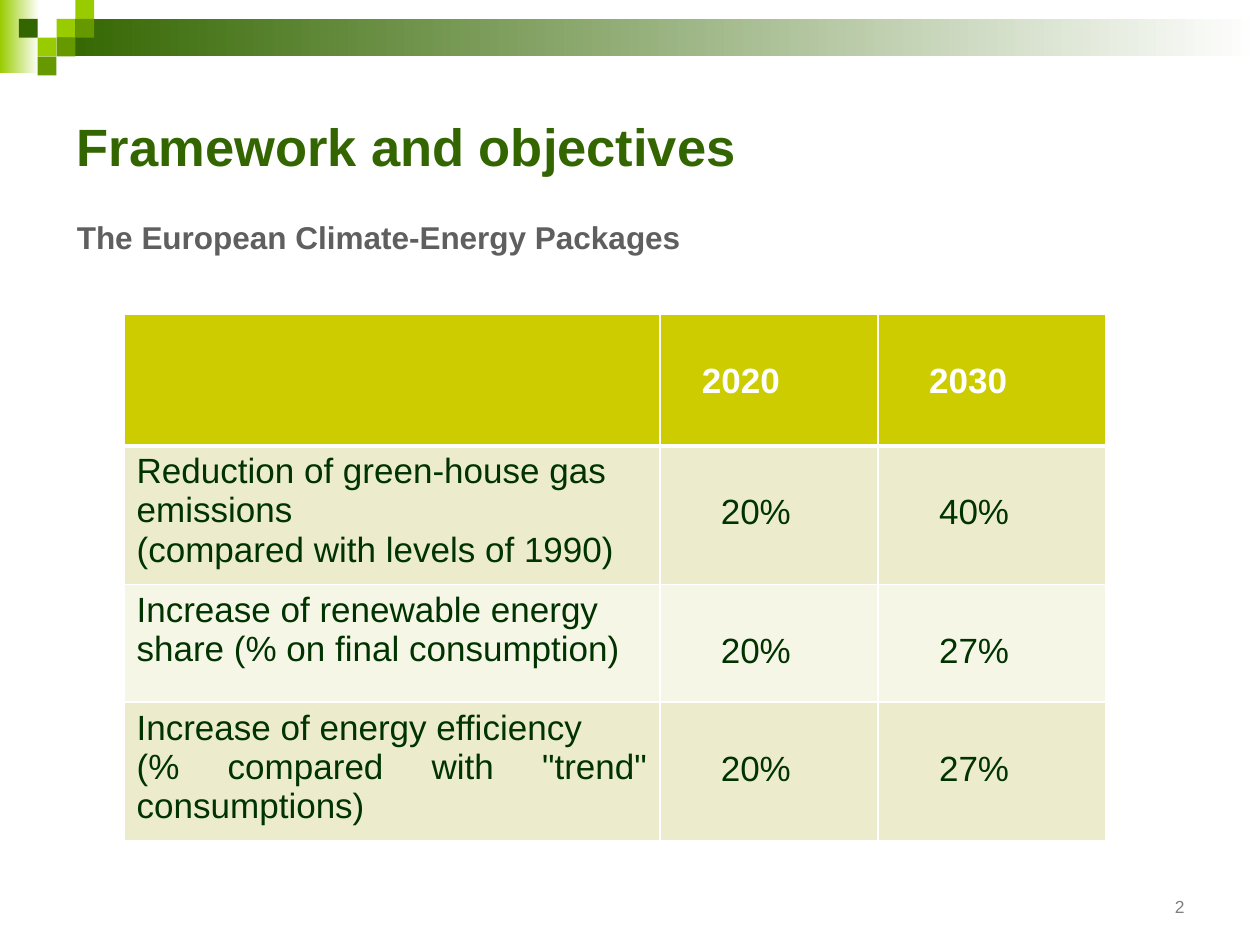
from lxml import etree
from pptx import Presentation
from pptx.dml.color import RGBColor
from pptx.enum import shapes, text
from pptx.oxml import ns
from pptx.util import Cm, Pt

WHITE = RGBColor(0xFF, 0xFF, 0xFF)
LIME = RGBColor(0x99, 0xCC, 0x00)
LEAF = RGBColor(0x66, 0x99, 0x00)
FOREST = RGBColor(0x33, 0x66, 0x00)
DARK_GREEN = RGBColor(0x00, 0x33, 0x00)
SUBTITLE_GREY = RGBColor(0x5F, 0x5F, 0x5F)
NUMBER_GREY = RGBColor(0x80, 0x80, 0x80)
HEADER_FILL = RGBColor(0xCC, 0xCC, 0x00)
BAND_FILLS = (RGBColor(0xEC, 0xEC, 0xCC), RGBColor(0xF6, 0xF6, 0xE7))

LEFT, JUSTIFY, RIGHT = (
    text.PP_ALIGN.LEFT, text.PP_ALIGN.JUSTIFY, text.PP_ALIGN.RIGHT)
TILE = 0.38
# Column, row and colour of each tile, counted from the top left corner.
TILES = [(3, 1, LIME), (4, 0, LIME), (4, 1, LEAF), (2, 2, LIME),
         (1, 1, FOREST), (3, 2, LEAF), (2, 3, LEAF)]

COLUMN_WIDTHS = (10.8, 4.4, 4.6)
ROW_HEIGHTS = (2.65, 2.6, 2.37, 2.6)
YEARS = ("2020", "2030")
YEAR_MARGINS = (0.85, 1.03)
VALUE_MARGIN = 1.23
TARGETS = [
    ([("Reduction of green-house gas emissions", LEFT),
      ("(compared with levels of 1990)", LEFT)], ("20%", "40%")),
    ([("Increase of renewable energy share (% on final consumption)", LEFT)],
     ("20%", "27%")),
    ([("Increase of energy efficiency", LEFT),
      ('(% compared with "trend" consumptions)', JUSTIFY)], ("20%", "27%")),
]


def add_block(slide, left, top, width, height):
    block = slide.shapes.add_shape(
        shapes.MSO_SHAPE.RECTANGLE, Cm(left), Cm(top), Cm(width), Cm(height))
    block.shadow.inherit = False
    block.line.fill.background()
    return block


def add_fading_bar(slide, left, top, width, height, color):
    """Add a bar that fades to white on its right."""
    fill = add_block(slide, left, top, width, height).fill
    fill.gradient()
    fill.gradient_angle = 0
    for stop, shade, position in zip(fill.gradient_stops, (color, WHITE), (0, 1)):
        stop.color.rgb = shade
        stop.position = position


def add_banner(slide):
    add_fading_bar(slide, 0, 0, 0.79, 1.47, LIME)
    add_fading_bar(slide, 3 * TILE, TILE, 25.4 - 3 * TILE, 2 * TILE, FOREST)
    for column, row, color in TILES:
        tile = add_block(slide, column * TILE, row * TILE, TILE, TILE)
        tile.fill.solid()
        tile.fill.fore_color.rgb = color


def write(paragraph, words, size, color, bold=False, align=LEFT):
    paragraph.alignment = align
    run = paragraph.add_run()
    run.text = words
    run.font.name = "Arial"
    run.font.size = Pt(size)
    run.font.bold = bold
    run.font.color.rgb = color


def add_text(slide, left, top, width, height, anchor, *style, **options):
    frame = slide.shapes.add_textbox(
        Cm(left), Cm(top), Cm(width), Cm(height)).text_frame
    frame.word_wrap = True
    frame.vertical_anchor = anchor
    write(frame.paragraphs[0], *style, **options)
    return frame.paragraphs[0]


def style_cell(cell, fill, bottom_width=1):
    """Fill the cell and give it white borders."""
    properties = cell._tc.get_or_add_tcPr()
    for side, width in (("L", 1), ("R", 1), ("T", 1), ("B", bottom_width)):
        line = etree.SubElement(
            properties, ns.qn(f"a:ln{side}"), w=str(Pt(width)))
        paint = etree.SubElement(line, ns.qn("a:solidFill"))
        etree.SubElement(paint, ns.qn("a:srgbClr"), val=str(WHITE))
    cell.fill.solid()
    cell.fill.fore_color.rgb = fill


def write_figure(cell, words, margin, color, bold=False):
    cell.margin_left = Cm(margin)
    cell.margin_top = Cm(0.95)
    write(cell.text_frame.paragraphs[0], words, 20, color, bold)


def add_targets_table(slide):
    table = slide.shapes.add_table(
        len(ROW_HEIGHTS), len(COLUMN_WIDTHS), Cm(2.5), Cm(6.34),
        Cm(sum(COLUMN_WIDTHS)), Cm(sum(ROW_HEIGHTS))).table
    for column, width in zip(table.columns, COLUMN_WIDTHS):
        column.width = Cm(width)
    for row, height in zip(table.rows, ROW_HEIGHTS):
        row.height = Cm(height)

    for cell in table.rows[0].cells:
        style_cell(cell, HEADER_FILL, bottom_width=3)
    for column, (year, margin) in enumerate(zip(YEARS, YEAR_MARGINS), 1):
        write_figure(table.cell(0, column), year, margin, WHITE, bold=True)

    for row, (objective, values) in enumerate(TARGETS, 1):
        for cell in table.rows[row].cells:
            style_cell(cell, BAND_FILLS[(row - 1) % 2],
                       bottom_width=1)
        frame = table.cell(row, 0).text_frame
        for index, (words, align) in enumerate(objective):
            paragraph = frame.add_paragraph() if index else frame.paragraphs[0]
            write(paragraph, words, 20, DARK_GREEN, align=align)
        for column, value in enumerate(values, 1):
            write_figure(table.cell(row, column), value, VALUE_MARGIN, DARK_GREEN)


def main():
    deck = Presentation()
    deck.slide_width, deck.slide_height = Cm(25.4), Cm(19.05)
    slide = deck.slides.add_slide(deck.slide_layouts[6])
    add_banner(slide)
    add_text(slide, 1.3, 1.73, 22.86, 2.39, text.MSO_ANCHOR.MIDDLE,
             "Framework and objectives", 30, FOREST, bold=True)
    subtitle = add_text(slide, 1.3, 4.12, 22.86, 12.6, text.MSO_ANCHOR.TOP,
                        "The European Climate-Energy Packages", 18,
                        SUBTITLE_GREY, bold=True, align=JUSTIFY)
    subtitle.line_spacing = 1.2
    add_text(slide, 18.2, 17.35, 5.93, 1.27, text.MSO_ANCHOR.BOTTOM,
             "2", 10, NUMBER_GREY, align=RIGHT)
    add_targets_table(slide)
    deck.save("out.pptx")


if __name__ == "__main__":
    main()
